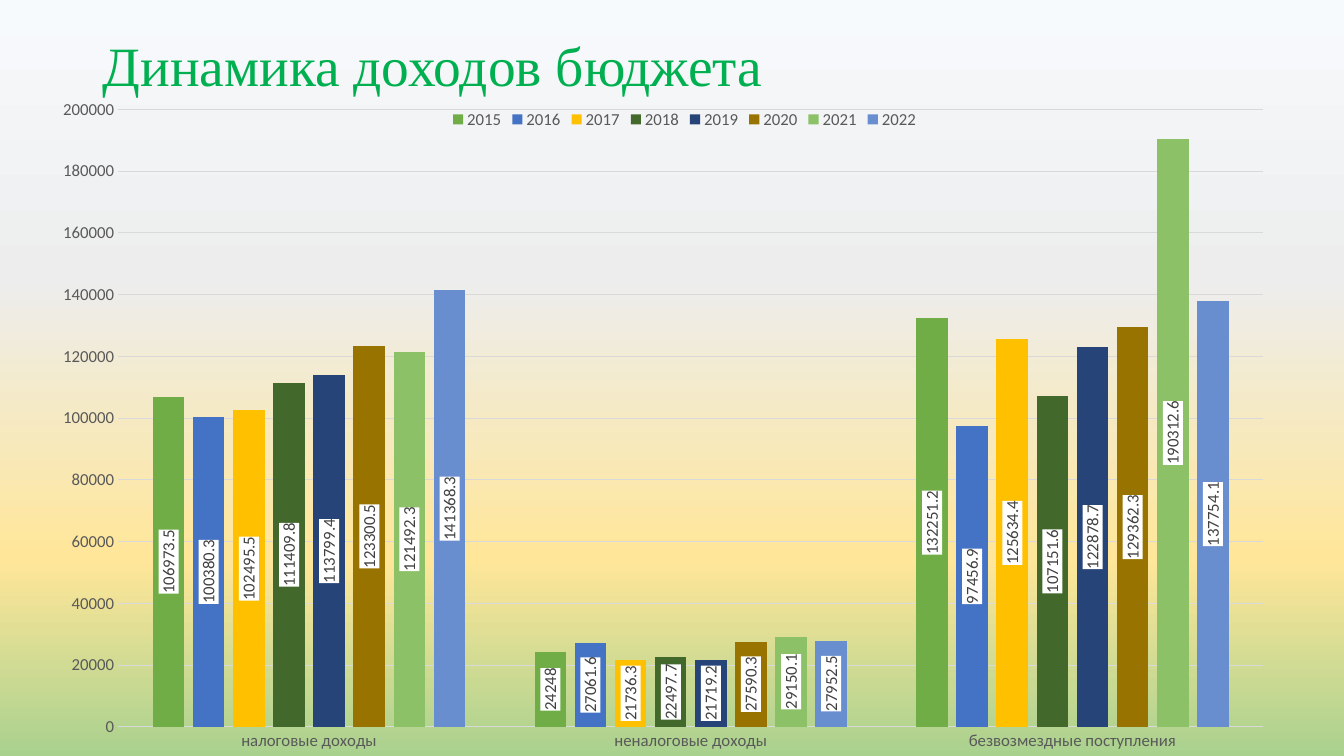
from typing import NamedTuple

from lxml import etree
from pptx import Presentation, util as u
from pptx.chart.data import CategoryChartData
from pptx.dml.color import RGBColor
from pptx.enum import chart as ch, text as tx
from pptx.oxml import parse_xml
from pptx.oxml.ns import nsdecls, qn

COLORS = {
    "title": "00B050", "text": "595959", "label": "404040",
    "grid": "D9D9D9", "white": "FFFFFF",
    "sky": "F7FAFD", "mist": "EDEDED", "sand": "FFE699", "grass": "A9D18E",
    "2015": "70AD47", "2016": "4472C4", "2017": "FFC000", "2018": "43682B",
    "2019": "264478", "2020": "997300", "2021": "8CC168", "2022": "698ED0",
}
STOPS = {"sky": 0, "mist": 37, "sand": 74, "grass": 100}
GROUPS = ["налоговые доходы", "неналоговые доходы", "безвозмездные поступления"]


class Box(NamedTuple):
    left: int
    top: int
    width: int
    height: int


class Year(NamedTuple):
    name: str
    vals: tuple[float, float, float]


YEARS = [
    Year("2015", (106973.5, 24248, 132251.2)),
    Year("2016", (100380.3, 27061.6, 97456.9)),
    Year("2017", (102495.5, 21736.3, 125634.4)),
    Year("2018", (111409.8, 22497.7, 107151.6)),
    Year("2019", (113799.4, 21719.2, 122878.7)),
    Year("2020", (123300.5, 27590.3, 129362.3)),
    Year("2021", (121492.3, 29150.1, 190312.6)),
    Year("2022", (141368.3, 27952.5, 137754.1)),
]
WIDE, HIGH = 1344, 756
TITLE = Box(93, 40, 1159, 57)
CHART = Box(58, 98, 1253, 667)
PLOT = {"x": 0.048, "y": 0.017, "w": 0.914, "h": 0.926}


def px(n: int) -> u.Emu:
    return u.Emu(round(n * 12192000 / WIDE))


def place(box: Box) -> list[u.Emu]:
    return [px(n) for n in box]


def rgb(name: str) -> RGBColor:
    return RGBColor.from_string(COLORS[name])


def style(font, size: float, color: str, face: str = "Calibri") -> None:
    font.size, font.name, font.bold = u.Pt(size), face, False
    font.color.rgb = rgb(color)


def paint(slide) -> None:
    fill = slide.background.fill
    fill.gradient()
    fill.gradient_angle = 270
    stops = next(slide.element.iter(qn("a:gsLst")))
    for old in list(stops):
        stops.remove(old)
    for name, pos in STOPS.items():
        stop = etree.SubElement(stops, qn("a:gs"), pos=str(pos * 1000))
        etree.SubElement(stop, qn("a:srgbClr"), val=COLORS[name])


def head(slide) -> None:
    frame = slide.shapes.add_textbox(*place(TITLE)).text_frame
    frame.word_wrap = True
    frame.vertical_anchor = tx.MSO_ANCHOR.MIDDLE
    para = frame.paragraphs[0]
    para.text = "Динамика доходов бюджета"
    para.line_spacing = 0.9
    style(para.font, 39.6, "title", "Times New Roman")


def label(bar) -> None:
    tags = bar.data_labels
    tags.show_value = True
    tags.position = ch.XL_LABEL_POSITION.CENTER
    style(tags.font, 12, "label")
    text = tags._element.find(qn("c:txPr"))
    body = text.find(qn("a:bodyPr"))
    body.set("rot", "-5400000")
    body.set("vert", "horz")
    text.addprevious(parse_xml(
        f'<c:spPr {nsdecls("c", "a")}><a:solidFill>'
        f'<a:srgbClr val="{COLORS["white"]}"/></a:solidFill></c:spPr>'))


def rule(line) -> None:
    line.color.rgb = rgb("grid")
    line.width = u.Pt(0.75)


def axes(chart) -> None:
    cat, val = chart.category_axis, chart.value_axis
    for axis in (cat, val):
        axis.major_tick_mark = axis.minor_tick_mark = ch.XL_TICK_MARK.NONE
        style(axis.tick_labels.font, 12, "text")
    rule(cat.format.line)
    val.format.line.fill.background()
    val.minimum_scale, val.maximum_scale, val.major_unit = 0, 200000, 20000
    val.has_major_gridlines = True
    rule(val.major_gridlines.format.line)


def layout(chart) -> None:
    area = next(chart.element.iter(qn("c:plotArea")))
    for old in area.findall(qn("c:layout")):
        area.remove(old)
    outer = etree.Element(qn("c:layout"))
    inner = etree.SubElement(outer, qn("c:manualLayout"))
    parts = {"layoutTarget": "inner", "xMode": "edge", "yMode": "edge"} | PLOT
    for tag, val in parts.items():
        etree.SubElement(inner, qn(f"c:{tag}"), val=str(val))
    area.insert(0, outer)


def graph(slide) -> None:
    data = CategoryChartData()
    data.categories = GROUPS
    for year in YEARS:
        data.add_series(year.name, year.vals)
    kind = ch.XL_CHART_TYPE.COLUMN_CLUSTERED
    chart = slide.shapes.add_chart(kind, *place(CHART), data).chart
    chart.has_title = False
    chart.font.size, chart.font.name = u.Pt(10), "Calibri"
    chart.has_legend = True
    chart.legend.position = ch.XL_LEGEND_POSITION.TOP
    chart.legend.include_in_layout = False
    style(chart.legend.font, 12, "text")
    plot = chart.plots[0]
    plot.gap_width, plot.overlap, plot.vary_by_categories = 219, -27, False
    for bar in plot.series:
        bar.format.fill.solid()
        bar.format.fill.fore_color.rgb = rgb(bar.name)
        label(bar)
    axes(chart)
    layout(chart)


def main() -> None:
    deck = Presentation()
    deck.slide_width, deck.slide_height = px(WIDE), px(HIGH)
    slide = deck.slides.add_slide(deck.slide_layouts[6])
    paint(slide)
    head(slide)
    graph(slide)
    deck.save("out.pptx")


if __name__ == "__main__":
    main()
